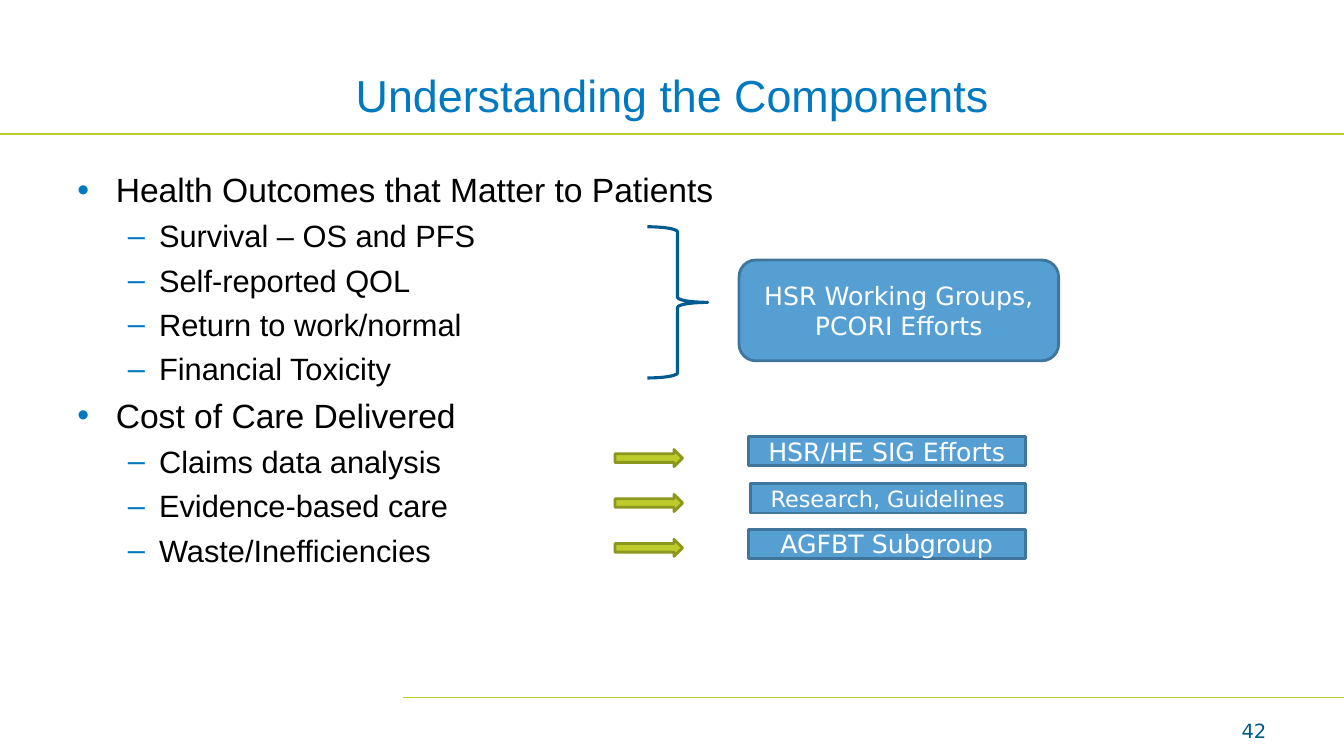
from dataclasses import dataclass

from lxml.etree import SubElement
from pptx import Presentation
from pptx.dml.color import RGBColor
from pptx.enum.shapes import MSO_CONNECTOR, MSO_SHAPE
from pptx.enum.text import MSO_ANCHOR, PP_ALIGN
from pptx.oxml.ns import qn
from pptx.util import Inches, Pt

BLUE = RGBColor(0x00, 0x79, 0xC1)
NAVY = RGBColor(0x00, 0x5C, 0x8A)
BRACE_BLUE = RGBColor(0x00, 0x5B, 0x91)
BOX_BLUE = RGBColor(0x56, 0x9F, 0xD3)
BOX_EDGE = RGBColor(0x40, 0x76, 0x9C)
LIME = RGBColor(0xBD, 0xCC, 0x2A)
LIME_EDGE = RGBColor(0x8C, 0x97, 0x1F)
BLACK = RGBColor(0x00, 0x00, 0x00)
WHITE = RGBColor(0xFF, 0xFF, 0xFF)


@dataclass
class Place:
    left: float
    top: float
    width: float
    height: float

    def lengths(self) -> list:
        return [Inches(v) for v in (self.left, self.top, self.width, self.height)]


@dataclass
class Level:
    bullet: str
    margin: float
    indent: float
    size: int
    space: float


@dataclass
class Effort:
    text: str
    place: Place
    size: int = 18
    outline: MSO_SHAPE = MSO_SHAPE.RECTANGLE


TOPIC = Level("•", 0.38, -0.38, 24, 5.5)
DETAIL = Level("–", 0.81, -0.31, 22, 5.3)

COMPONENTS = {
    "Health Outcomes that Matter to Patients": [
        "Survival – OS and PFS", "Self-reported QOL",
        "Return to work/normal", "Financial Toxicity"],
    "Cost of Care Delivered": [
        "Claims data analysis", "Evidence-based care", "Waste/Inefficiencies"],
}

EFFORTS = [
    Effort("HSR Working Groups, PCORI Efforts", Place(7.33, 2.58, 3.17, 1),
           outline=MSO_SHAPE.ROUNDED_RECTANGLE),
    Effort("HSR/HE SIG Efforts", Place(7.42, 4.33, 2.75, 0.29)),
    Effort("Research, Guidelines", Place(7.44, 4.8, 2.73, 0.29), size=16),
    Effort("AGFBT Subgroup", Place(7.42, 5.25, 2.75, 0.29)),
]


def set_font(paragraph, name: str, size: int, color: RGBColor) -> None:
    for key, value in {"name": name, "size": Pt(size)}.items():
        setattr(paragraph.font, key, value)
    paragraph.font.color.rgb = color


def add_rule(slide, start: float, y: float) -> None:
    rule = slide.shapes.add_connector(
        MSO_CONNECTOR.STRAIGHT, Inches(start), Inches(y), Inches(13.33), Inches(y))
    rule.line.color.rgb = LIME
    rule.line.width = Pt(1)
    SubElement(rule._element.spPr, qn("a:effectLst"))


def add_text_frame(slide, place: Place, **formats):
    frame = slide.shapes.add_textbox(*place.lengths()).text_frame
    for key, value in {"word_wrap": True, **formats}.items():
        setattr(frame, key, value)
    return frame


def add_label(slide, place: Place, text: str, align: PP_ALIGN,
              anchor: MSO_ANCHOR, font: tuple) -> None:
    frame = add_text_frame(slide, place, vertical_anchor=anchor)
    paragraph = frame.paragraphs[0]
    paragraph.text = text
    paragraph.alignment = align
    set_font(paragraph, *font)


def add_bullet(paragraph, text: str, level: Level) -> None:
    paragraph.text = text
    props = paragraph._p.get_or_add_pPr()
    props.set("marL", str(Inches(level.margin)))
    props.set("indent", str(Inches(level.indent)))
    color = SubElement(props, qn("a:buClr"))
    SubElement(color, qn("a:srgbClr"), val=str(BLUE))
    SubElement(props, qn("a:buFont"), typeface="Arial")
    SubElement(props, qn("a:buChar"), char=level.bullet)
    set_font(paragraph, "Arial", level.size, BLACK)


def add_components(slide) -> None:
    frame = add_text_frame(slide, Place(0.67, 1.58, 12, 4.75), margin_top=Inches(0.1))
    lines = []
    for topic, details in COMPONENTS.items():
        lines.append((topic, TOPIC))
        lines += [(detail, DETAIL) for detail in details]
    for number, (text, level) in enumerate(lines):
        paragraph = frame.add_paragraph() if number else frame.paragraphs[0]
        add_bullet(paragraph, text, level)
        if number:
            paragraph.level = 1 if level is DETAIL else 0
            paragraph.space_before = Pt(level.space)


def add_figure(slide, outline: MSO_SHAPE, place: Place, fill: RGBColor | None,
               edge: RGBColor, weight: float):
    figure = slide.shapes.add_shape(outline, *place.lengths())
    figure.shadow.inherit = False
    if fill is None:
        figure.fill.background()
    else:
        figure.fill.solid()
        figure.fill.fore_color.rgb = fill
    figure.line.color.rgb = edge
    figure.line.width = Pt(weight)
    return figure


def add_effort(slide, effort: Effort) -> None:
    box = add_figure(slide, effort.outline, effort.place, BOX_BLUE, BOX_EDGE, 2)
    frame = box.text_frame
    for key, value in {"word_wrap": True, "vertical_anchor": MSO_ANCHOR.MIDDLE}.items():
        setattr(frame, key, value)
    paragraph = frame.paragraphs[0]
    paragraph.text = effort.text
    paragraph.alignment = PP_ALIGN.CENTER
    set_font(paragraph, "DejaVu Sans", effort.size, WHITE)


def main() -> None:
    deck = Presentation()
    deck.slide_width, deck.slide_height = Inches(13.33), Inches(7.5)
    slide = deck.slides.add_slide(deck.slide_layouts[6])

    # Rules, title and page number
    add_rule(slide, 0, 1.33)
    add_rule(slide, 4, 6.92)
    add_label(slide, Place(0.67, 0.25, 12, 1), "Understanding the Components",
              PP_ALIGN.CENTER, MSO_ANCHOR.BOTTOM, ("Arial", 32, BLUE))
    add_label(slide, Place(11.33, 7.08, 1.33, 0.42), "42",
              PP_ALIGN.RIGHT, MSO_ANCHOR.TOP, ("DejaVu Sans", 14, NAVY))

    # Bulleted components
    add_components(slide)

    # Brace and arrows leading to the efforts
    add_figure(slide, MSO_SHAPE.RIGHT_BRACE, Place(6.42, 2.25, 0.6, 1.5),
               None, BRACE_BLUE, 2.25)
    for row in range(3):
        add_figure(slide, MSO_SHAPE.RIGHT_ARROW,
                   Place(6.1, 4.46 + row * 0.445, 0.67, 0.17), LIME, LIME_EDGE, 2)

    # Efforts
    for effort in EFFORTS:
        add_effort(slide, effort)

    deck.save("out.pptx")


if __name__ == "__main__":
    main()
